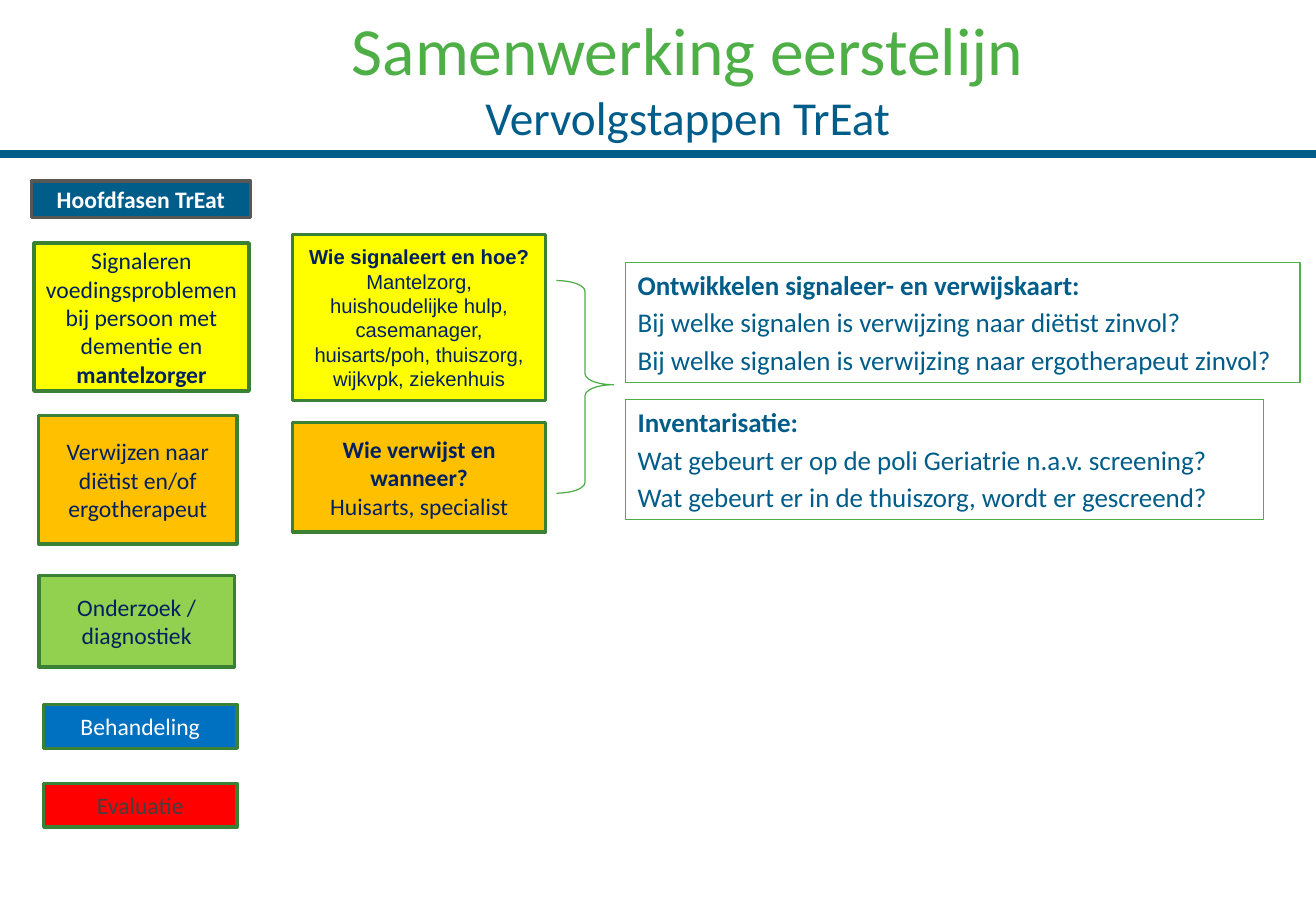
from lxml import etree
from pptx import Presentation
from pptx.dml.color import RGBColor
from pptx.enum.shapes import MSO_CONNECTOR, MSO_SHAPE
from pptx.enum.text import MSO_ANCHOR, PP_ALIGN
from pptx.oxml.ns import qn
from pptx.util import Inches, Pt

RECT, BRACE = MSO_SHAPE.RECTANGLE, MSO_SHAPE.RIGHT_BRACE
LINE, MIDDLE, TOP = MSO_CONNECTOR.STRAIGHT, MSO_ANCHOR.MIDDLE, MSO_ANCHOR.TOP
CENTER, LEFT = PP_ALIGN.CENTER, PP_ALIGN.LEFT
PAGE = (0, 0, 10.83, 7.5)
INK = {
    "green": "4FAF47", "edge": "3A8135", "blue": "005C89", "navy": "002060",
    "gray": "575756", "dark": "414140", "white": "FFFFFF", "yellow": "FFFF00",
    "orange": "FFC000", "lime": "92D050", "azure": "0070C0", "red": "FF0000",
}


def color(name):
    """Return the named colour."""
    return RGBColor.from_string(INK[name])


def part(box, x, y, w, h):
    """Return a box given in percent of its parent box."""
    left, top, wide, high = box
    return (left + wide * x / 100, top + high * y / 100,
            wide * w / 100, high * h / 100)


def write(shape, rows, size=14, ink="navy", font="Calibri", align=CENTER,
          anchor=MIDDLE, inset=(0.07, 0.03), gap=0):
    """Fill a shape with rows of (text, format) runs."""
    frame = shape.text_frame
    frame.word_wrap = True
    frame.vertical_anchor = anchor
    frame.margin_left = frame.margin_right = Inches(inset[0])
    frame.margin_top = frame.margin_bottom = Inches(inset[1])
    for i, row in enumerate(rows):
        para = frame.add_paragraph() if i else frame.paragraphs[0]
        para.alignment = align
        if i and gap:
            para.space_before = Pt(gap)
        for text, form in row:
            run = para.add_run()
            run.text = text
            run.font.name = font
            run.font.size = Pt(form.get("size", size))
            run.font.bold = form.get("bold", False)
            run.font.color.rgb = color(form.get("ink", ink))


def block(slide, box, fill=None, edge="edge", width=2, kind=RECT):
    """Draw an outlined shape."""
    shape = slide.shapes.add_shape(kind, *map(Inches, box))
    shape.shadow.inherit = False
    if fill:
        shape.fill.solid()
        shape.fill.fore_color.rgb = color(fill)
    else:
        shape.fill.background()
    shape.line.color.rgb = color(edge)
    shape.line.width = Pt(width)
    return shape


def header(slide, box):
    """Place the title above its rule."""
    left, top, wide, high = box
    ends = (left, top + high, left + wide, top + high)
    rule = slide.shapes.add_connector(LINE, *map(Inches, ends))
    rule.line.color.rgb = color("blue")
    rule.line.width = Pt(4.5)
    etree.SubElement(rule._element.spPr, qn("a:effectLst"))
    title = slide.shapes.add_textbox(*map(Inches, part(box, 12.83, 0, 78.86, 99.2)))
    write(title, [[("Samenwerking eerstelijn", {"size": 40, "ink": "green"})],
                  [("Vervolgstappen TrEat", {"size": 28, "ink": "blue"})]],
          inset=(0.06, 0.06))


def phases(slide, box):
    """Place the column of main phases."""
    steps = [
        ((0, 0, 100, 5.64), "blue", "gray", "white",
         [[("Hoofdfasen TrEat", {"bold": True})]]),
        ((1.11, 9.59, 98.33, 22.93), "yellow", "edge", "navy",
         [[("Signaleren", {})],
          [("voedingsproblemen bij persoon met dementie en ", {}),
           ("mantelzorger", {"bold": True})]]),
        ((3.33, 36.28, 90.56, 19.92), "orange", "edge", "navy",
         [[("Verwijzen naar diëtist en/of ergotherapeut", {})]]),
        ((3.33, 61.09, 89.44, 14.1), "lime", "edge", "navy",
         [[("Onderzoek / diagnostiek", {})]]),
        ((5.56, 81.02, 88.33, 6.77), "azure", "edge", "white",
         [[("Behandeling", {})]]),
        ((5.56, 93.23, 88.33, 6.77), "red", "edge", "dark",
         [[("Evaluatie", {})]]),
    ]
    for place, fill, edge, ink, rows in steps:
        write(block(slide, part(box, *place), fill, edge), rows, ink=ink)


def roles(slide, box):
    """Place the boxes on who signals and who refers."""
    cards = [
        (0, 55.92, "yellow", "Arial", 12, "Wie signaleert en hoe?",
         "Mantelzorg, huishoudelijke hulp, casemanager, huisarts/poh, "
         "thuiszorg, wijkvpk, ziekenhuis"),
        (63.27, 36.73, "orange", "Calibri", 14, "Wie verwijst en wanneer?",
         "Huisarts, specialist"),
    ]
    for y, high, fill, font, size, head, body in cards:
        write(block(slide, part(box, 0, y, 100, high), fill),
              [[(head, {"bold": True})], [(body, {})]], font=font, size=size)


def actions(slide, box):
    """Place the brace and the two action boxes."""
    brace = block(slide, part(box, 0, 7.08, 7.68, 82.55), None, "green", 0.75, BRACE)
    brace.adjustments[0] = 0.19
    brace.adjustments[1] = 0.49
    cards = [
        (0, 90.69, "Ontwikkelen signaleer- en verwijskaart:",
         "Bij welke signalen is verwijzing naar diëtist zinvol?",
         "Bij welke signalen is verwijzing naar ergotherapeut zinvol?"),
        (53.3, 85.78, "Inventarisatie:",
         "Wat gebeurt er op de poli Geriatrie n.a.v. screening?",
         "Wat gebeurt er in de thuiszorg, wordt er gescreend?"),
    ]
    for y, wide, head, *lines in cards:
        card = block(slide, part(box, 9.31, y, wide, 46.7), None, "green", 0.75)
        write(card, [[(head, {"bold": True})]] + [[(line, {})] for line in lines],
              size=16, ink="blue", align=LEFT, anchor=TOP, inset=(0.1, 0.05), gap=3)


def main():
    """Build and save the slide."""
    deck = Presentation()
    deck.slide_width, deck.slide_height = map(Inches, PAGE[2:])
    slide = deck.slides.add_slide(deck.slide_layouts[6])
    header(slide, part(PAGE, 0, 0, 100, 16.93))
    phases(slide, part(PAGE, 2.4, 19.87, 16.62, 70.93))
    roles(slide, part(PAGE, 22.25, 25.73, 19.21, 32.67))
    actions(slide, part(PAGE, 42.29, 28.8, 56.51, 28.27))
    deck.save("out.pptx")


if __name__ == "__main__":
    main()
